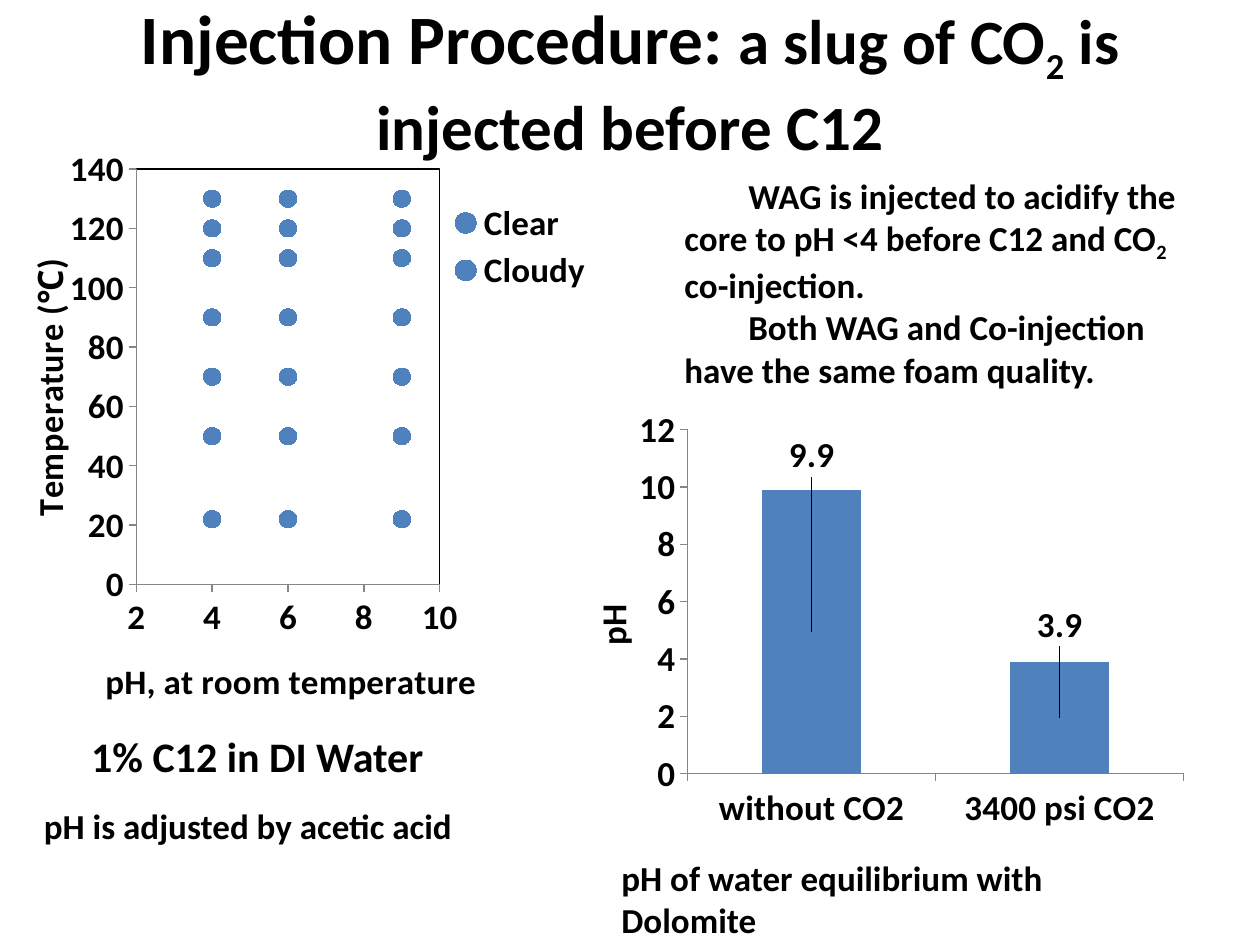
from lxml import etree
from pptx import Presentation
from pptx.chart.data import CategoryChartData, XyChartData
from pptx.dml.color import RGBColor
from pptx.enum.chart import XL_CHART_TYPE as ChartType, XL_LEGEND_POSITION as LegendPos
from pptx.enum.chart import XL_MARKER_STYLE as Marker, XL_TICK_MARK as Tick
from pptx.enum.text import MSO_ANCHOR as Anchor, MSO_AUTO_SIZE as AutoSize, PP_ALIGN as Align
from pptx.oxml.ns import qn
from pptx.util import Pt

COLORS = {"text": "000000", "series": "4F81BD", "axis": "868686"}
TEMPERATURES = [22, 50, 70, 90, 110, 120, 130]
PH_GROUPS = {"Clear": 4, "Series 2": 6, "Cloudy": 9}
PH_VALUES = {"without CO2": 9.9, "3400 psi CO2": 3.9}


def rgb(name):
    return RGBColor.from_string(COLORS[name])


def set_layout(parent, index, inner=False, edge=True, **fractions):
    """Give a chart part a manual layout in fractions of the chart."""
    for old in parent.findall(qn("c:layout")):
        parent.remove(old)
    layout = etree.Element(qn("c:layout"))
    manual = etree.SubElement(layout, qn("c:manualLayout"))
    if inner:
        etree.SubElement(manual, qn("c:layoutTarget")).set("val", "inner")
    if edge:
        for mode in ("xMode", "yMode"):
            etree.SubElement(manual, qn(f"c:{mode}")).set("val", "edge")
    for key, value in fractions.items():
        etree.SubElement(manual, qn(f"c:{key}")).set("val", str(value))
    parent.insert(index, layout)


class SlideBuilder:
    font_name = "Calibri"

    def __init__(self, prs):
        self.s = prs.slides.add_slide(prs.slide_layouts[5])

    def style(self, font, size=None):
        font.name, font.bold = self.font_name, True
        font.color.rgb = rgb("text")
        if size:
            font.size = Pt(size)

    def fill_paragraph(self, p, runs, size):
        """Write (text, size or None, is subscript) runs into a paragraph."""
        self.style(p.font, size)
        for text, run_size, subscript in runs:
            r = p.add_run()
            r.text = text
            self.style(r.font, run_size or size)
            if subscript:
                r._r.get_or_add_rPr().set("baseline", "-25000")

    def title(self, box, runs, size):
        sp = self.s.shapes.title
        sp.left, sp.top, sp.width, sp.height = map(Pt, box)
        tf = sp.text_frame
        tf.auto_size, tf.vertical_anchor = AutoSize.NONE, Anchor.MIDDLE
        tf.paragraphs[0].alignment = Align.CENTER
        self.fill_paragraph(tf.paragraphs[0], runs, size)

    def text(self, box, paragraphs, size=20, align=Align.LEFT, indent=0, wrap=True):
        tf = self.s.shapes.add_textbox(*map(Pt, box)).text_frame
        tf.word_wrap, tf.auto_size = wrap, AutoSize.SHAPE_TO_FIT_TEXT
        for i, runs in enumerate(paragraphs):
            p = tf.add_paragraph() if i else tf.paragraphs[0]
            p.alignment = align
            if indent:
                p._p.get_or_add_pPr().set("indent", str(Pt(indent)))
            self.fill_paragraph(p, runs, size)

    def chart(self, kind, box, data, plot):
        chart = self.s.shapes.add_chart(kind, *map(Pt, box), data).chart
        self.style(chart.font, 20)
        chart.has_title = chart.has_legend = False
        chart.plots[0].vary_by_categories = False
        for axis in (chart.category_axis, chart.value_axis):
            axis.has_major_gridlines = False
            axis.major_tick_mark, axis.minor_tick_mark = Tick.OUTSIDE, Tick.NONE
            axis.format.line.color.rgb = rgb("axis")
        area = chart._chartSpace.xpath("c:chart/c:plotArea")[0]
        set_layout(area, 0, inner=True, **plot)
        return chart

    def axis_title(self, axis, text, x, y):
        tf = axis.axis_title.text_frame
        tf.text = text
        self.style(tf.paragraphs[0].font, 20)
        self.style(tf.paragraphs[0].runs[0].font, 20)
        set_layout(axis.axis_title._element, 1, x=x, y=y)

    def scatter_chart(self, box):
        data = XyChartData()
        for name, ph in PH_GROUPS.items():
            series = data.add_series(name)
            for temperature in TEMPERATURES:
                series.add_data_point(ph, temperature)
        chart = self.chart(ChartType.XY_SCATTER, box, data,
                           dict(x=0.22, y=0.04, w=0.49, h=0.75))
        for series in chart.plots[0].series:
            series.format.line.fill.background()
            series.marker.style, series.marker.size = Marker.CIRCLE, 10
            series.marker.format.fill.solid()
            series.marker.format.fill.fore_color.rgb = rgb("series")
            series.marker.format.line.fill.background()
        x_axis, y_axis = chart.category_axis, chart.value_axis
        x_axis.minimum_scale, x_axis.maximum_scale, x_axis.major_unit = 2, 10, 2
        y_axis.minimum_scale, y_axis.maximum_scale, y_axis.major_unit = 0, 140, 20
        self.axis_title(x_axis, "pH, at room temperature", 0.16, 0.91)
        self.axis_title(y_axis, "Temperature (℃)", 0.03, 0.2)
        self.frame_plot(chart)
        self.legend(chart, hidden=1)

    def frame_plot(self, chart):
        area = chart._chartSpace.xpath("c:chart/c:plotArea")[0]
        sp_pr = etree.SubElement(area, qn("c:spPr"))
        etree.SubElement(sp_pr, qn("a:noFill"))
        ln = etree.SubElement(sp_pr, qn("a:ln"), w=str(Pt(0.75)))
        fill = etree.SubElement(ln, qn("a:solidFill"))
        etree.SubElement(fill, qn("a:srgbClr"), val=COLORS["text"])

    def legend(self, chart, hidden):
        chart.has_legend = True
        chart.legend.position = LegendPos.RIGHT
        chart.legend.include_in_layout = False
        element = chart.legend._element
        set_layout(element, 1, x=0.71, y=0.09, w=0.26, h=0.18)
        entry = etree.Element(qn("c:legendEntry"))
        etree.SubElement(entry, qn("c:idx")).set("val", str(hidden))
        etree.SubElement(entry, qn("c:delete")).set("val", "1")
        element.insert(1, entry)

    def bar_chart(self, box):
        data = CategoryChartData()
        data.categories = list(PH_VALUES)
        data.add_series("Series 1", list(PH_VALUES.values()))
        chart = self.chart(ChartType.COLUMN_STACKED, box, data,
                           dict(x=0.23, y=0.07, w=0.75, h=0.78))
        plot = chart.plots[0]
        plot.gap_width, plot.overlap = 150, 100
        series = plot.series[0]
        series.format.fill.solid()
        series.format.fill.fore_color.rgb = rgb("series")
        axis = chart.value_axis
        axis.minimum_scale, axis.maximum_scale, axis.major_unit = 0, 12, 2
        self.axis_title(axis, "pH", 0.07, 0.45)
        series.data_labels.show_value = True
        for i, value in enumerate(PH_VALUES.values()):
            self.style(series.points[i].data_label.font, 20)
            label = series._element.xpath("c:dLbls/c:dLbl")[i]
            # Lift the label from the bar's middle to just above its top.
            lift = -(value / 12 * 0.78 / 2 + 0.08)
            set_layout(label, 1, edge=False, x=0, y=round(lift, 2))


def main():
    prs = Presentation()
    prs.slide_width, prs.slide_height = Pt(720), Pt(540)
    b = SlideBuilder(prs)
    b.title((36, 0, 648, 90), [
        ("Injection Procedure: ", 39.6, False), ("a slug of CO", None, False),
        ("2", None, True), (" is injected before C12", None, False)], 36)
    b.scatter_chart((0, 84, 354, 324))
    b.text((30, 414, 234, 36), [[("1% C12 in DI Water", None, False)]],
           size=24, align=Align.CENTER)
    b.text((18, 456, 250, 31.5), [[("pH is adjusted by acetic acid", None, False)]],
           wrap=False)
    b.text((384, 96, 312, 128), [
        [("WAG is injected to acidify the core to pH <4 before C12 and CO", None, False),
         ("2", None, True), (" co-injection.", None, False)],
        [("Both WAG and Co-injection have the same foam quality.", None, False)]],
        indent=36.5)
    b.bar_chart((306, 228, 378, 252))
    b.text((348, 486, 336, 31.5), [[("pH of water equilibrium with Dolomite", None, False)]])
    prs.save("out.pptx")


if __name__ == "__main__":
    main()
